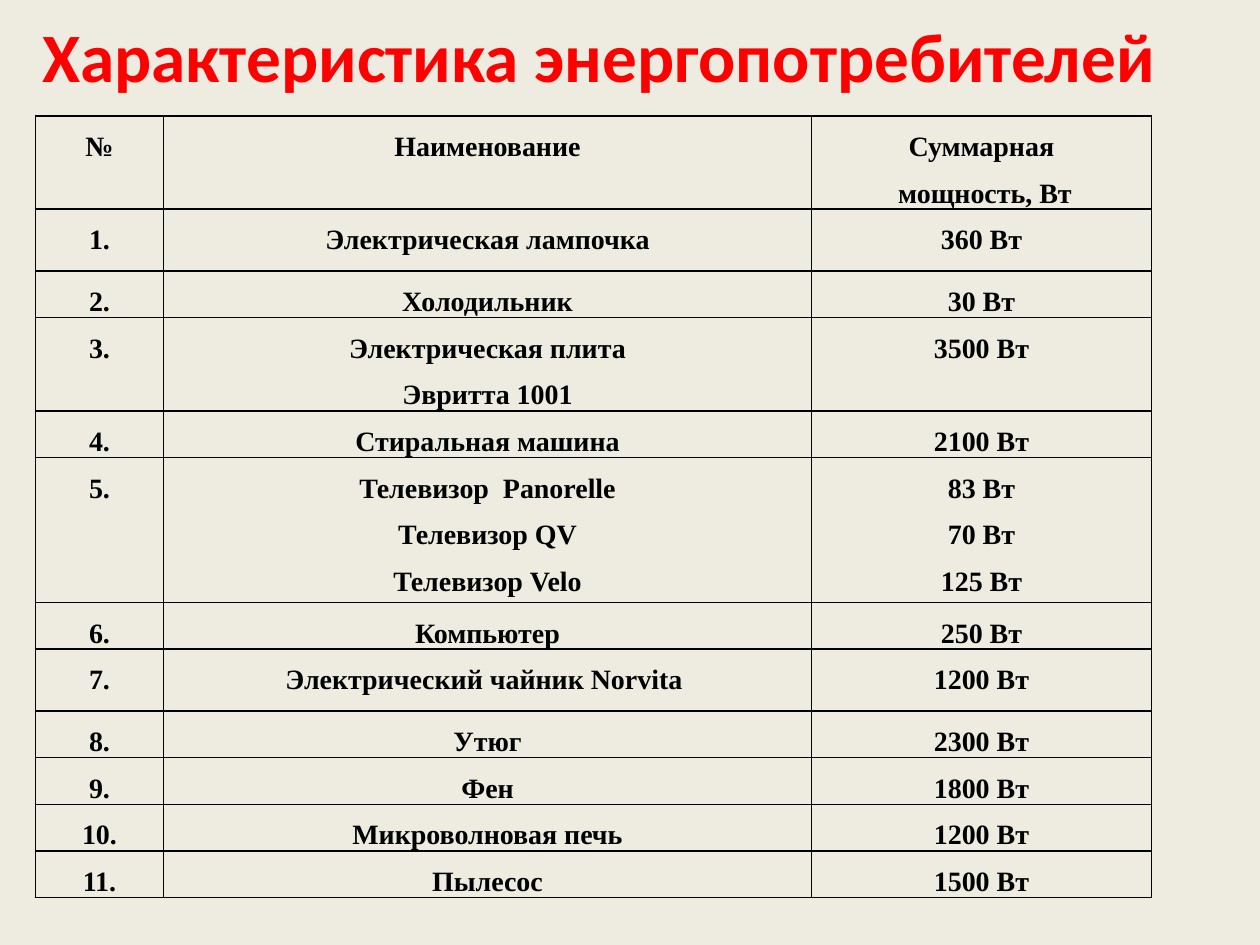
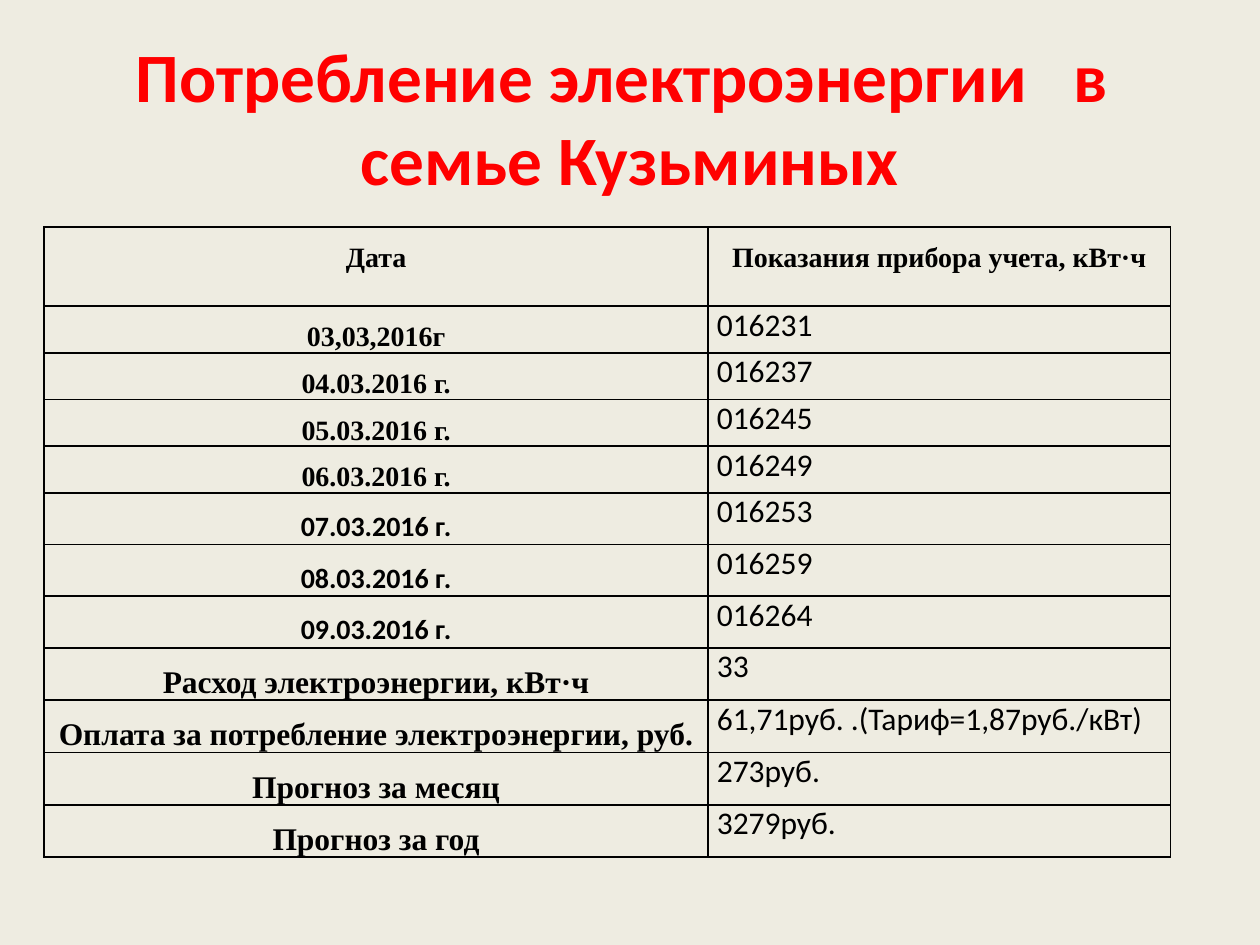
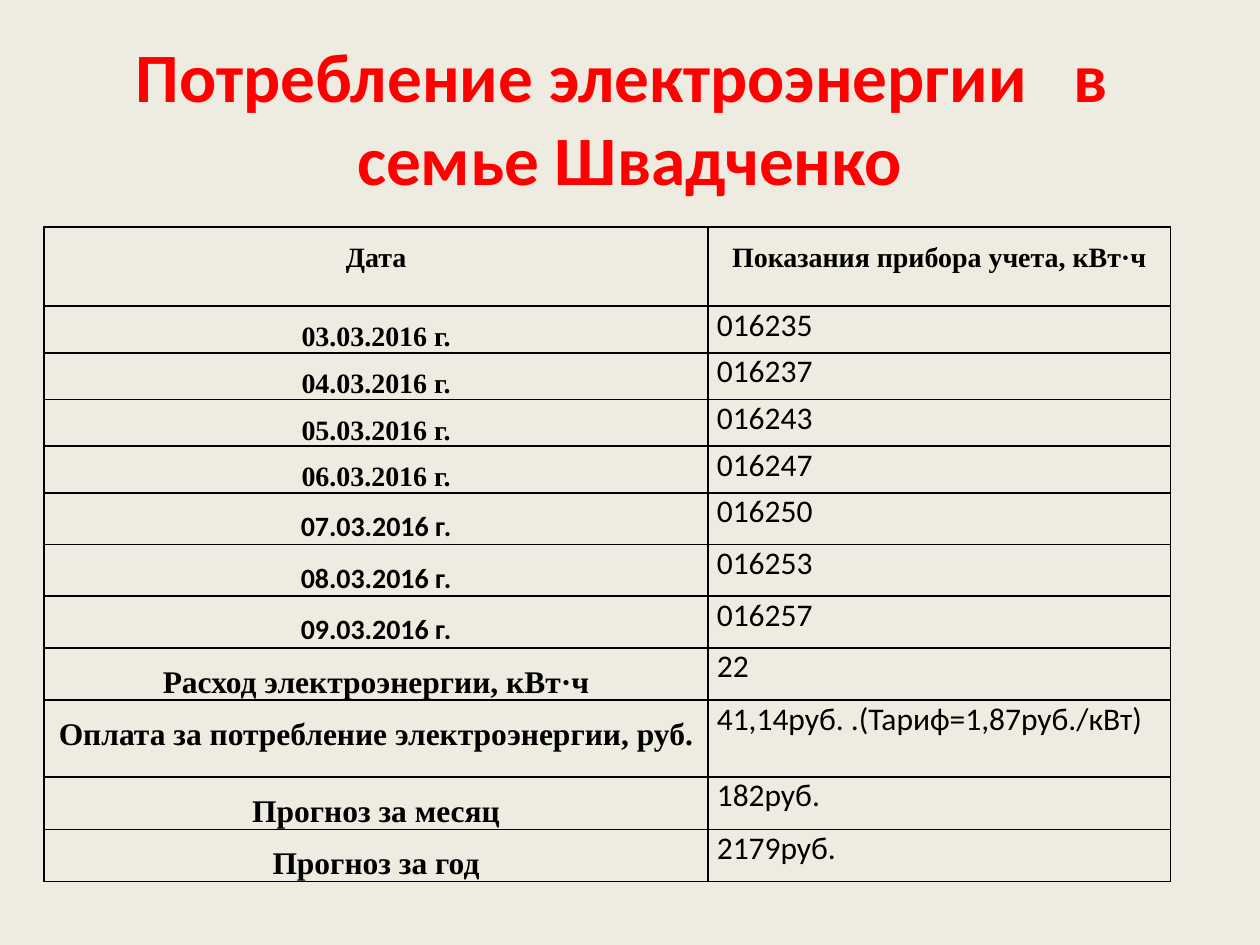
"""Build three slides on household power use: appliance ratings and two families' meter readings."""
from dataclasses import dataclass

from lxml import etree
from pptx import Presentation
from pptx.dml.color import RGBColor
from pptx.enum.text import MSO_ANCHOR, MSO_AUTO_SIZE, PP_ALIGN
from pptx.oxml.ns import qn
from pptx.util import Emu, Inches, Pt

CENTER, LEFT = PP_ALIGN.CENTER, PP_ALIGN.LEFT
MIDDLE, NO_FIT = MSO_ANCHOR.MIDDLE, MSO_AUTO_SIZE.NONE
TITLE_ONLY = 5


@dataclass(frozen=True)
class Theme:
    """Colours, fonts and type sizes of the deck."""
    back: str = "EEECE1"
    title: str = "FF0000"
    ink: str = "000000"
    sans: str = "Calibri"
    serif: str = "Times New Roman"
    title_size: float = 39.6
    label_size: float = 16
    value_size: float = 18
    border: float = 1


T = Theme()
STYLES = {
    "title": dict(name=T.sans, size=T.title_size, bold=True, color=T.title, align=CENTER, spacing=1),
    "label": dict(name=T.serif, size=T.label_size, bold=True, color=T.ink, align=CENTER, spacing=1.5),
    "late": dict(name=T.sans, size=T.label_size, bold=True, color=T.ink, align=CENTER, spacing=1.5),
    "total": dict(name=T.serif, size=T.value_size, bold=True, color=T.ink, align=CENTER, spacing=1.5),
    "value": dict(name=T.sans, size=T.value_size, bold=False, color=T.ink, align=LEFT, spacing=1),
}

APPLIANCES = [
    (0.74, "№", "Наименование", "Суммарная\n мощность, Вт"),
    (0.49, "1.", "Электрическая лампочка", "360 Вт"),
    (0.37, "2.", "Холодильник", "30 Вт"),
    (0.74, "3.", "Электрическая плита\nЭвритта 1001", "3500 Вт"),
    (0.37, "4.", "Стиральная машина", "2100 Вт"),
    (1.15, "5.", "Телевизор  Panorelle\nТелевизор QV\nТелевизор Velo", "83 Вт\n70 Вт\n125 Вт"),
    (0.37, "6.", "Компьютер", "250 Вт"),
    (0.49, "7.", "Электрический чайник Norvita ", "1200 Вт"),
    (0.37, "8.", "Утюг", "2300 Вт"),
    (0.37, "9.", "Фен", "1800 Вт"),
    (0.37, "10.", "Микроволновая печь", "1200 Вт"),
    (0.37, "11.", "Пылесос", "1500 Вт"),
]
READING_HEAD = ("Дата", "Показания прибора учета, кВт·ч")
DATES = [f"{day:02}.03.2016 г." for day in range(3, 10)]
TOTALS = [
    "Расход электроэнергии, кВт·ч",
    "Оплата за потребление электроэнергии, руб.",
    "Прогноз за месяц",
    "Прогноз за год",
]
FAMILIES = [
    dict(
        name="Кузьминых",
        dates=["03,03,2016г"] + DATES[1:],
        readings=["016231", "016237", "016245", "016249", "016253", "016259", "016264"],
        totals=["33", "61,71руб. .(Тариф=1,87руб./кВт)", "273руб.", "3279руб."],
        payment_height=0.41,
    ),
    dict(
        name="Швадченко",
        dates=DATES,
        readings=["016235", "016237", "016243", "016247", "016250", "016253", "016257"],
        totals=["22", "41,14руб. .(Тариф=1,87руб./кВт)", "182руб.", "2179руб."],
        payment_height=0.61,
    ),
]
SERIF_DATES = 4
HEIGHTS = {"label": 0.37, "late": 0.41, "total": 0.41}


def write(tf, text, style):
    f = STYLES[style]
    for i, line in enumerate(text.split("\n")):
        p = tf.paragraphs[0] if i == 0 else tf.add_paragraph()
        p.alignment, p.line_spacing = f["align"], f["spacing"]
        r = p.add_run()
        r.text = line
        for key, value in dict(name=f["name"], size=Pt(f["size"]), bold=f["bold"]).items():
            setattr(r.font, key, value)
        r.font.color.rgb = RGBColor.from_string(f["color"])


def add_borders(cell):
    tc_pr = cell._tc.get_or_add_tcPr()
    for i, side in enumerate(("a:lnL", "a:lnR", "a:lnT", "a:lnB")):
        ln = etree.Element(qn(side), w=str(Pt(T.border)))
        fill = etree.SubElement(ln, qn("a:solidFill"))
        etree.SubElement(fill, qn("a:srgbClr"), val=T.ink)
        tc_pr.insert(i, ln)


def add_slide(prs, title, box):
    s = prs.slides.add_slide(prs.slide_layouts[TITLE_ONLY])
    sp = s.shapes.title
    for key, value in zip(("left", "top", "width", "height"), box):
        setattr(sp, key, Inches(value))
    tf = sp.text_frame
    for key, value in dict(word_wrap=True, auto_size=NO_FIT, vertical_anchor=MIDDLE).items():
        setattr(tf, key, value)
    write(tf, title, "title")
    return s


def add_grid(s, left, top, cols, rows, inset):
    """Add a ruled table whose rows are (height, [(text, style), ...])."""
    heights = [height for height, _ in rows]
    size = map(Inches, (left, top, sum(cols), sum(heights)))
    table = s.shapes.add_table(len(rows), len(cols), *size).table
    table.first_row = table.horz_banding = False
    for col, width in zip(table.columns, cols):
        col.width = Inches(width)
    margins = dict(margin_left=Inches(inset), margin_right=Inches(inset),
                   margin_top=Emu(0), margin_bottom=Emu(0))
    for row, (height, cells) in zip(table.rows, rows):
        row.height = Inches(height)
        for cell, (text, style) in zip(row.cells, cells):
            for key, value in margins.items():
                setattr(cell, key, value)
            cell.fill.background()
            add_borders(cell)
            write(cell.text_frame, text, style)


def reading_rows(family):
    rows = [(0.63, [(text, "label") for text in READING_HEAD])]
    for i, (date, reading) in enumerate(zip(family["dates"], family["readings"])):
        style = "label" if i < SERIF_DATES else "late"
        rows.append((HEIGHTS[style], [(date, style), (reading, "value")]))
    for i, (label, value) in enumerate(zip(TOTALS, family["totals"])):
        height = family["payment_height"] if i == 1 else HEIGHTS["total"]
        rows.append((height, [(label, "total"), (value, "value")]))
    return rows


def main():
    prs = Presentation()
    prs.slide_width, prs.slide_height = Inches(10), Inches(7.5)
    fill = prs.slide_master.background.fill
    fill.solid()
    fill.fore_color.rgb = RGBColor.from_string(T.back)

    s = add_slide(prs, "Характеристика энергопотребителей", (0, -0.19, 9.51, 1.25))
    rows = [(height, [(text, "label") for text in texts]) for height, *texts in APPLIANCES]
    add_grid(s, 0.28, 0.92, (1.02, 5.14, 2.7), rows, 0.06)

    for family in FAMILIES:
        title = f"Потребление электроэнергии   в  семье {family['name']}"
        s = add_slide(prs, title, (0.5, 0.3, 9, 1.25))
        add_grid(s, 0.35, 1.8, (5.27, 3.67), reading_rows(family), 0.07)
    prs.save("out.pptx")


if __name__ == "__main__":
    main()
